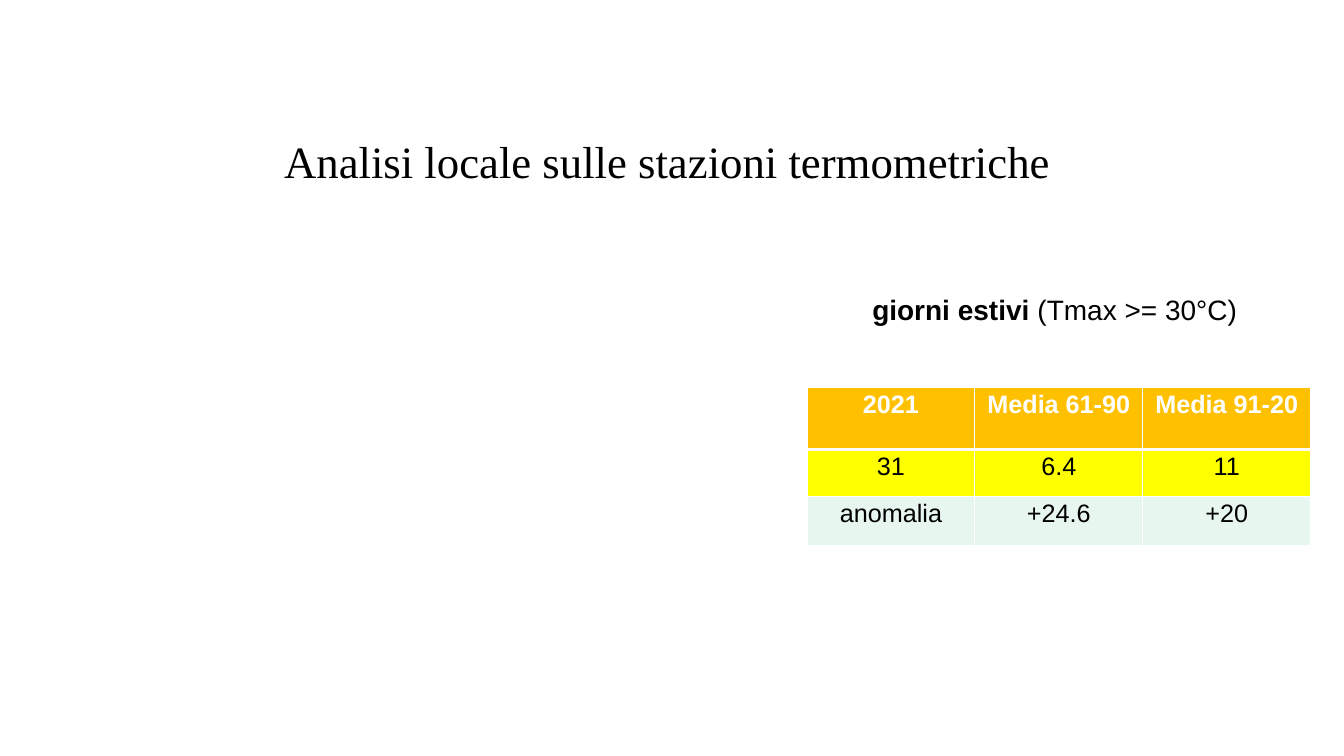
from pptx import Presentation
from pptx.dml.color import RGBColor as Rgb
from pptx.enum.text import MSO_ANCHOR as Anchor, MSO_AUTO_SIZE as Fit, PP_ALIGN as Align
from pptx.oxml import parse_xml
from pptx.oxml.ns import nsdecls
from pptx.util import Inches, Pt

HUES = {"ink": "000000", "white": "FFFFFF", "head": "FFC000",
        "year": "FFFF00", "diff": "E7F6EF"}
ROWS = [
    (0.62, "head", "white", ("2021", "Media 61-90", "Media 91-20")),
    (0.47, "year", "ink", ("31", "6.4", "11")),
    (0.48, "diff", "ink", ("anomalia", "+24.6", "+20")),
]


class Page:
    """Holds the text style and the slide, and adds each kind of element."""

    def __init__(self, deck):
        self.slide = deck.slides.add_slide(deck.slide_layouts[5])
        self.lead = 0.93

    def style(self, run, size, hue="ink", bold=False, face="Arial"):
        """Format one run."""
        font = run.font
        font.name, font.size, font.bold = face, Pt(size), bold
        font.color.rgb = Rgb.from_string(HUES[hue])

    def title(self, text, box):
        """Place and fill the title."""
        shape = self.slide.shapes.title
        shape.left, shape.top, shape.width, shape.height = map(Inches, box)
        frame = shape.text_frame
        frame.text = text
        frame.auto_size, frame.vertical_anchor = Fit.NONE, Anchor.TOP
        frame.margin_left = frame.margin_right = frame.margin_bottom = 0
        frame.margin_top = Inches(0.1)
        para = frame.paragraphs[0]
        para.alignment = Align.CENTER
        self.style(para.runs[0], 32, face="Times New Roman")

    def label(self, parts, box):
        """Add a text box of plain and bold parts."""
        frame = self.slide.shapes.add_textbox(*map(Inches, box)).text_frame
        frame.word_wrap = True
        frame.vertical_anchor = Anchor.MIDDLE
        para = frame.paragraphs[0]
        para.line_spacing = self.lead
        for text, bold in parts:
            run = para.add_run()
            run.text = text
            self.style(run, 20, bold=bold)

    def edge(self, cell, side, width):
        """Draw one white border of a cell."""
        cell._tc.get_or_add_tcPr().append(parse_xml(
            f'<a:ln{side} {nsdecls("a")} w="{Pt(width)}"><a:solidFill>'
            f'<a:srgbClr val="{HUES["white"]}"/></a:solidFill></a:ln{side}>'))

    def table(self, rows, box):
        """Add the table with its fills and borders."""
        grid = self.slide.shapes.add_table(
            len(rows), len(rows[0][3]), *map(Inches, box)).table
        for i, (tall, fill, hue, texts) in enumerate(rows):
            grid.rows[i].height = Inches(tall)
            for j, text in enumerate(texts):
                cell = grid.cell(i, j)
                widths = {"L": 1, "R": 1, "T": 3 if i == 1 else 1,
                          "B": 3 if i == 0 else 1}
                for side, width in widths.items():
                    self.edge(cell, side, width)
                cell.fill.solid()
                cell.fill.fore_color.rgb = Rgb.from_string(HUES[fill])
                cell.text_frame.text = text
                para = cell.text_frame.paragraphs[0]
                para.alignment, para.line_spacing = Align.CENTER, self.lead
                self.style(para.runs[0], 18, hue, bold=i == 0)


def main():
    """Build and save the slide."""
    deck = Presentation()
    deck.slide_width, deck.slide_height = Inches(13.34), Inches(7.5)
    page = Page(deck)
    page.title("Analisi locale sulle stazioni termometriche",
               (0.29, 1.23, 12.67, 0.63))
    page.label([("giorni estivi ", True), ("(Tmax >= 30°C)", False)],
               (8.56, 2.88, 3.86, 0.41))
    page.table(ROWS, (8.01, 3.84, 5, 1.57))
    deck.save("out.pptx")


if __name__ == "__main__":
    main()
